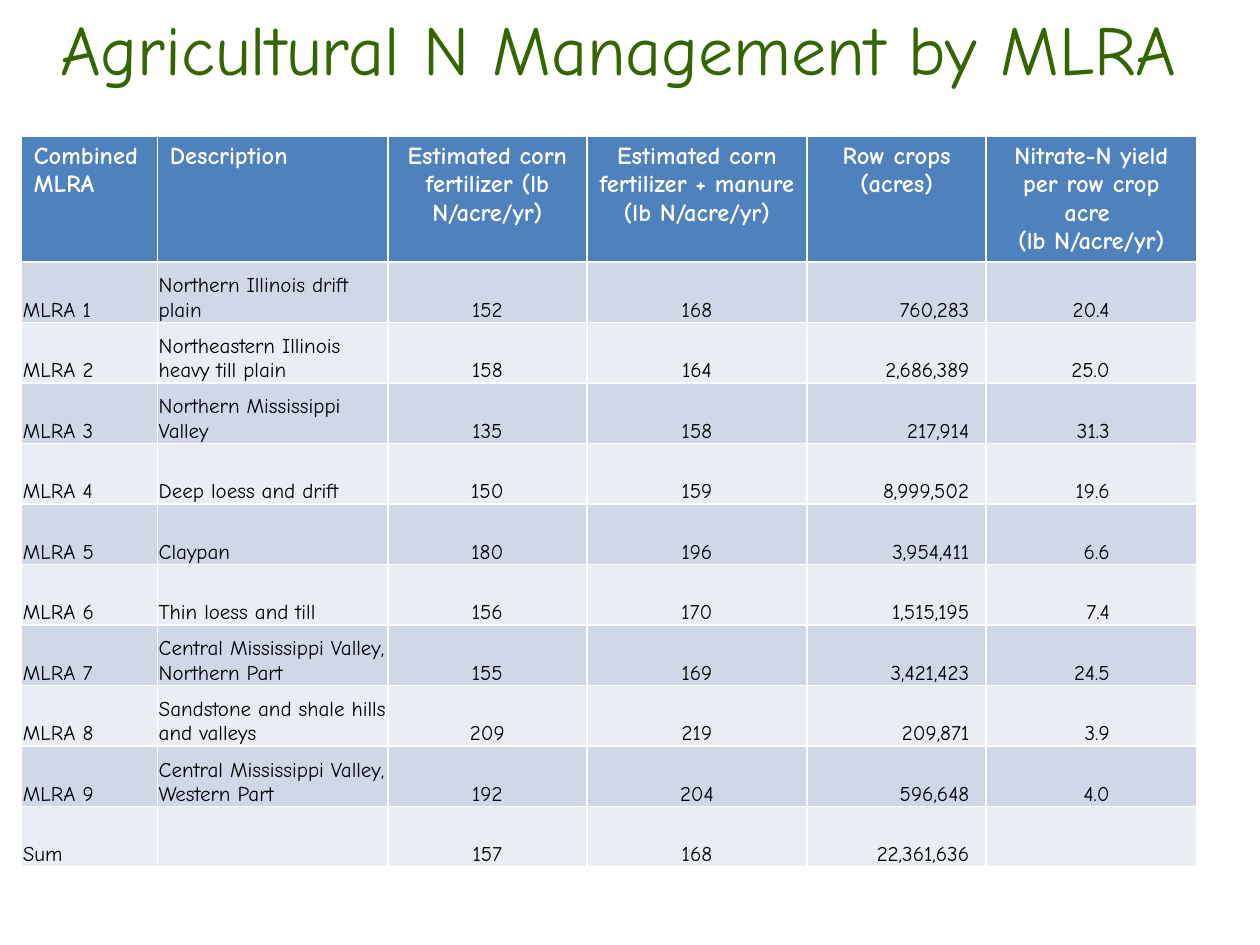
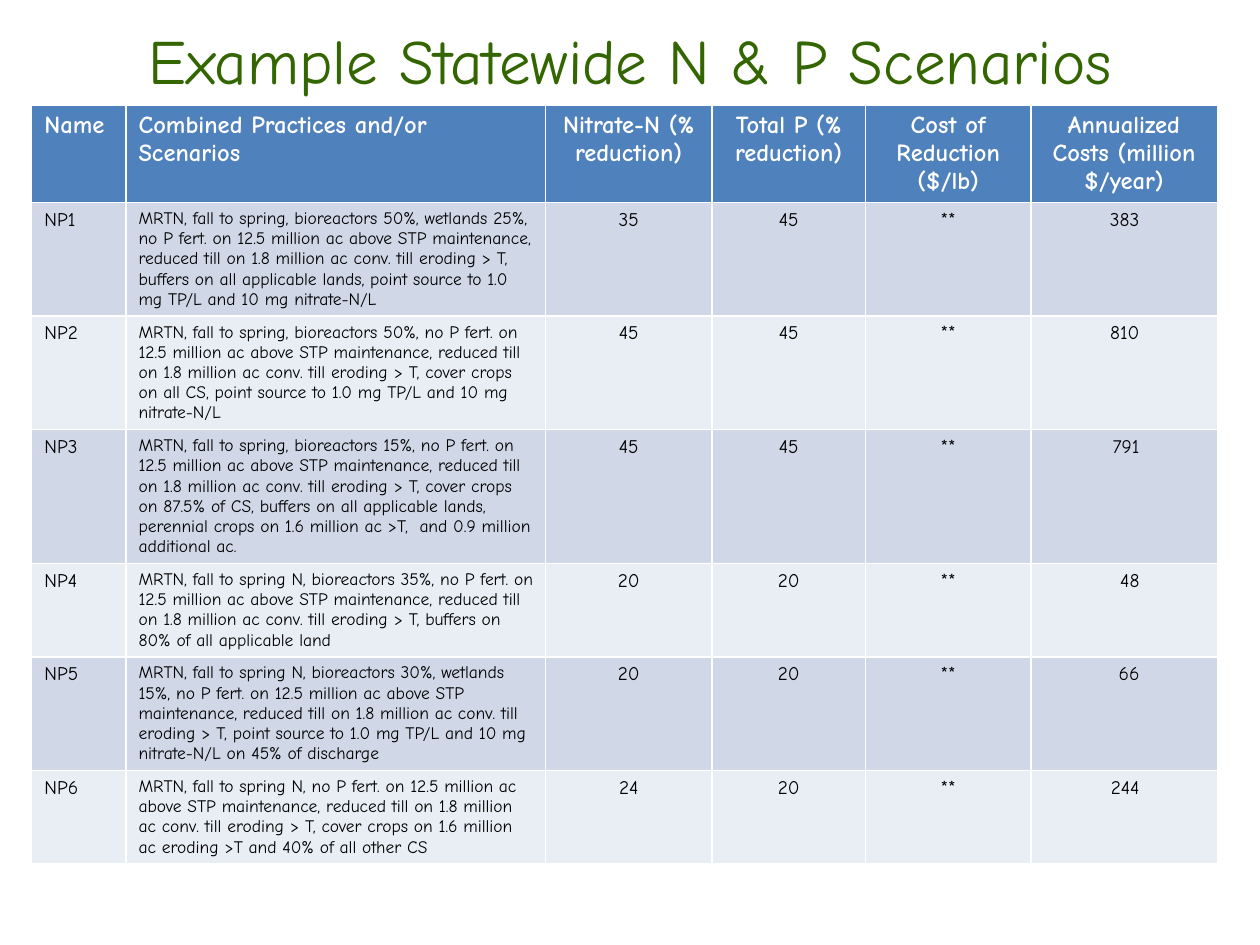
"""Build two slides of nutrient management tables."""
from dataclasses import dataclass

from pptx import Presentation
from pptx.dml.color import RGBColor
from pptx.enum.text import MSO_ANCHOR, MSO_AUTO_SIZE, PP_ALIGN
from pptx.util import Cm, Pt

FONT = "Comic Neue"
GREEN = RGBColor(0x33, 0x66, 0x00)
BLUE = RGBColor(0x4F, 0x81, 0xBD)
BAND_DARK = RGBColor(0xD0, 0xD8, 0xE8)
BAND_LIGHT = RGBColor(0xE9, 0xED, 0xF4)
WHITE = RGBColor(0xFF, 0xFF, 0xFF)
BLACK = RGBColor(0, 0, 0)
LEFT, CENTER, RIGHT = PP_ALIGN.LEFT, PP_ALIGN.CENTER, PP_ALIGN.RIGHT


@dataclass
class Column:
    """Heading, width in cm and body style of one table column."""
    heading: str
    width: float
    align: PP_ALIGN = CENTER
    size: int = 12
    right_margin: float = 0


MLRA_COLUMNS = [
    Column("Combined MLRA", 2.74, LEFT),
    Column("Description", 4.65, LEFT),
    Column("Estimated corn fertilizer (lb N/acre/yr)", 4.01),
    Column("Estimated corn fertilizer + manure \n(lb N/acre/yr)", 4.44),
    Column("Row crops (acres)", 3.61, RIGHT, right_margin=0.34),
    Column("Nitrate-N yield per row crop acre \n(lb N/acre/yr)", 4.24, RIGHT, right_margin=1.75),
]
MLRA_ROWS = [
    ("MLRA 1", "Northern Illinois drift plain", "152", "168", "760,283", "20.4"),
    ("MLRA 2", "Northeastern Illinois heavy till plain", "158", "164", "2,686,389", "25.0"),
    ("MLRA 3", "Northern Mississippi Valley", "135", "158", "217,914", "31.3"),
    ("MLRA 4", "Deep loess and drift", "150", "159", "8,999,502", "19.6"),
    ("MLRA 5", "Claypan", "180", "196", "3,954,411", "6.6"),
    ("MLRA 6", "Thin loess and till", "156", "170", "1,515,195", "7.4"),
    ("MLRA 7", "Central Mississippi Valley, Northern Part", "155", "169", "3,421,423", "24.5"),
    ("MLRA 8", "Sandstone and shale hills and valleys", "209", "219", "209,871", "3.9"),
    ("MLRA 9", "Central Mississippi Valley, Western Part", "192", "204", "596,648", "4.0"),
    ("Sum", "", "157", "168", "22,361,636", ""),
]
MLRA_HEIGHTS = [2.52] + [1.22] * len(MLRA_ROWS)

SCENARIO_COLUMNS = [
    Column("Name", 1.9, LEFT, 11),
    Column("Combined Practices and/or Scenarios", 8.46, LEFT, 10),
    Column("Nitrate-N (% reduction)", 3.35, size=11),
    Column("Total P (% reduction)", 3.1, size=11),
    Column("Cost of Reduction ($/lb)", 3.33, size=11),
    Column("Annualized Costs (million $/year)", 3.76, RIGHT, 11, 1.57),
]
SCENARIO_ROWS = [
    ("NP1", "MRTN, fall to spring, bioreactors 50%, wetlands 25%, no P fert. on 12.5 million ac "
     "above STP maintenance, reduced till on 1.8 million ac conv. till eroding > T, buffers on "
     "all applicable lands, point source to 1.0 mg TP/L and 10 mg nitrate-N/L",
     "35", "45", "**", "383"),
    ("NP2", "MRTN, fall to spring, bioreactors 50%, no P fert. on 12.5 million ac above STP "
     "maintenance, reduced till on 1.8 million ac conv. till eroding > T, cover crops on all CS, "
     "point source to 1.0 mg TP/L and 10 mg nitrate-N/L",
     "45", "45", "**", "810"),
    ("NP3", "MRTN, fall to spring, bioreactors 15%, no P fert. on 12.5 million ac above STP "
     "maintenance, reduced till on 1.8 million ac conv. till eroding > T, cover crops on 87.5% "
     "of CS, buffers on all applicable lands, perennial crops on 1.6 million ac >T,  and 0.9 "
     "million additional ac.",
     "45", "45", "**", "791"),
    ("NP4", "MRTN, fall to spring N, bioreactors 35%, no P fert. on 12.5 million ac above STP "
     "maintenance, reduced till on 1.8 million ac conv. till eroding > T, buffers on 80% of all "
     "applicable land",
     "20", "20", "**", "48"),
    ("NP5", "MRTN, fall to spring N, bioreactors 30%, wetlands 15%, no P fert. on 12.5 million "
     "ac above STP maintenance, reduced till on 1.8 million ac conv. till eroding > T, point "
     "source to 1.0 mg TP/L and 10 mg nitrate-N/L on 45% of discharge",
     "20", "20", "**", "66"),
    ("NP6", "MRTN, fall to spring N, no P fert. on 12.5 million ac above STP maintenance, "
     "reduced till on 1.8 million ac conv. till eroding > T, cover crops on 1.6 million ac "
     "eroding >T and 40% of all other CS",
     "24", "20", "**", "244"),
]
SCENARIO_HEIGHTS = [1.96, 2.29, 2.29, 2.69, 1.88, 2.29, 1.88]


def write_text(tf, text, size, color, align, bold=False):
    """Write one formatted run per line of text."""
    for i, line in enumerate(text.split("\n")):
        p = tf.add_paragraph() if i else tf.paragraphs[0]
        p.alignment = align
        if line:
            r = p.add_run()
            r.text = line
            r.font.name = FONT
            r.font.size = Pt(size)
            r.font.bold = bold
            r.font.color.rgb = color


def add_titled_slide(prs, title, size, left, top, width, height):
    """Add a title-only slide with its title placed in cm."""
    s = prs.slides.add_slide(prs.slide_layouts[5])
    sp = s.shapes.title
    sp.left, sp.top, sp.width, sp.height = Cm(left), Cm(top), Cm(width), Cm(height)
    tf = sp.text_frame
    tf.auto_size = MSO_AUTO_SIZE.NONE
    tf.vertical_anchor = MSO_ANCHOR.MIDDLE
    write_text(tf, title, size, GREEN, CENTER)
    return s


def fill_cell(cell, color):
    """Give a cell a solid fill."""
    cell.fill.solid()
    cell.fill.fore_color.rgb = color


def tighten(cell):
    """Rest the text on the bottom edge with hairline margins."""
    cell.vertical_anchor = MSO_ANCHOR.BOTTOM
    cell.margin_left = cell.margin_right = cell.margin_top = Cm(0.03)
    cell.margin_bottom = 0


def add_banded_table(s, left, top, columns, rows, heights, tight=False):
    """Add a table with a blue heading row and banded body rows."""
    width = sum(c.width for c in columns)
    table = s.shapes.add_table(len(rows) + 1, len(columns), Cm(left), Cm(top),
                               Cm(width), Cm(sum(heights))).table
    for row, height in zip(table.rows, heights):
        row.height = Cm(height)
    for j, column in enumerate(columns):
        table.columns[j].width = Cm(column.width)
        head = table.cell(0, j)
        fill_cell(head, BLUE)
        head_align = LEFT if column.align == LEFT else CENTER
        write_text(head.text_frame, column.heading, 14, WHITE, head_align, True)
        for i, values in enumerate(rows, 1):
            cell = table.cell(i, j)
            fill_cell(cell, BAND_DARK if i % 2 else BAND_LIGHT)
            if tight:
                tighten(cell)
            if column.right_margin:
                cell.margin_right = Cm(column.right_margin)
            write_text(cell.text_frame, values[j], column.size, BLACK, column.align)


def main():
    """Build and save the presentation."""
    prs = Presentation()
    prs.slide_width, prs.slide_height = Cm(25.4), Cm(19.05)
    s = add_titled_slide(prs, "Agricultural N Management by MLRA ", 40, 0, 0, 25.4, 1.9)
    add_banded_table(s, 0.43, 2.75, MLRA_COLUMNS, MLRA_ROWS, MLRA_HEIGHTS, tight=True)
    s = add_titled_slide(prs, "Example Statewide N & P Scenarios", 36, 1.27, 0.2, 22.86, 1.98)
    add_banded_table(s, 0.64, 2.12, SCENARIO_COLUMNS, SCENARIO_ROWS, SCENARIO_HEIGHTS)
    prs.save("out.pptx")


if __name__ == "__main__":
    main()
